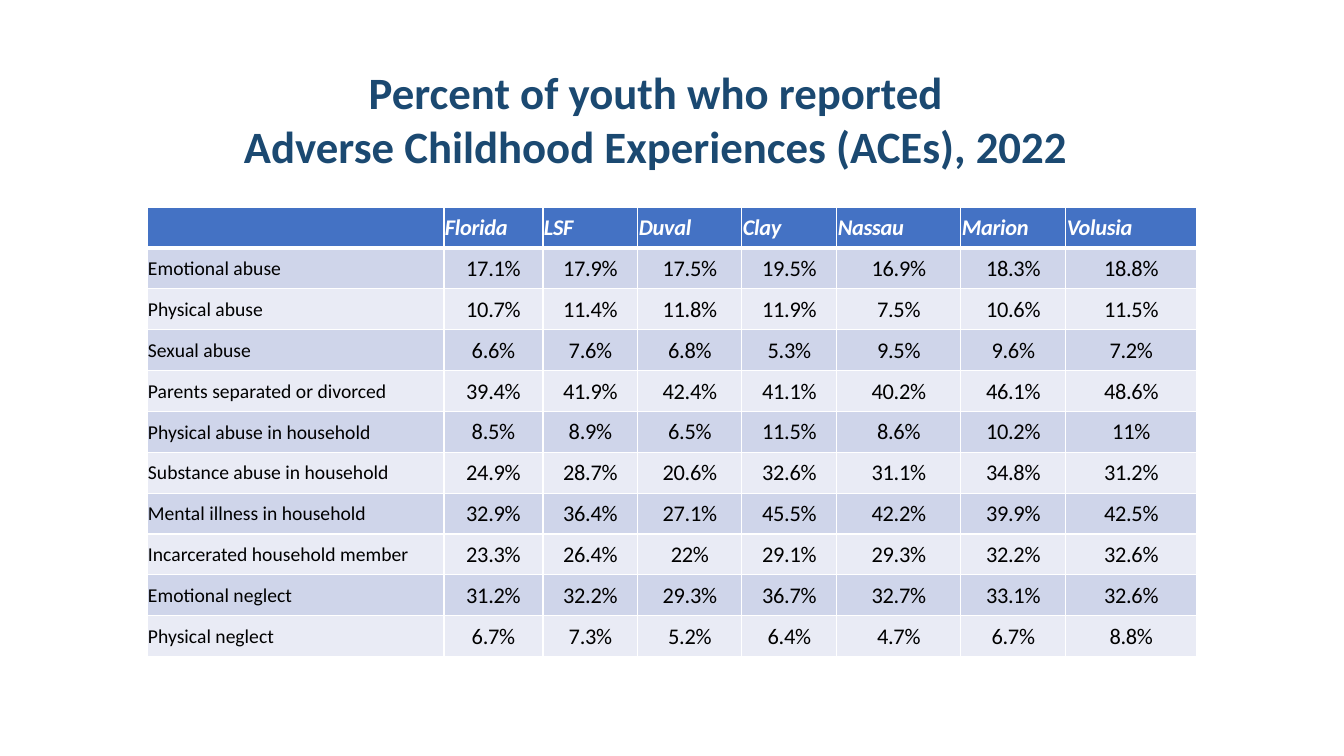
from lxml.etree import SubElement
from pptx import Presentation
from pptx.dml.color import RGBColor
from pptx.enum.text import MSO_ANCHOR, MSO_AUTO_SIZE, PP_ALIGN
from pptx.oxml.ns import qn
from pptx.util import Emu, Pt

EMU_PER_PX = 914400 / 100.8
FONT = "Calibri"
COLORS = {
    "title": "1B4971",
    "header": "4472C4",
    "band_dark": "CFD5EA",
    "band_light": "E9EBF5",
    "white": "FFFFFF",
    "black": "000000",
}

TITLE = "Percent of youth who reported \nAdverse Childhood Experiences (ACEs), 2022 "
AREAS = ["", "Florida", "LSF", "Duval", "Clay", "Nassau", "Marion", "Volusia"]
COLUMN_WIDTHS = [297, 99, 95, 104, 95, 124, 105, 131]
EXPERIENCES = [
    ["Emotional abuse", 17.1, 17.9, 17.5, 19.5, 16.9, 18.3, 18.8],
    ["Physical abuse", 10.7, 11.4, 11.8, 11.9, 7.5, 10.6, 11.5],
    ["Sexual abuse", 6.6, 7.6, 6.8, 5.3, 9.5, 9.6, 7.2],
    ["Parents separated or divorced", 39.4, 41.9, 42.4, 41.1, 40.2, 46.1, 48.6],
    ["Physical abuse in household", 8.5, 8.9, 6.5, 11.5, 8.6, 10.2, 11],
    ["Substance abuse in household", 24.9, 28.7, 20.6, 32.6, 31.1, 34.8, 31.2],
    ["Mental illness in household", 32.9, 36.4, 27.1, 45.5, 42.2, 39.9, 42.5],
    ["Incarcerated household member", 23.3, 26.4, 22, 29.1, 29.3, 32.2, 32.6],
    ["Emotional neglect", 31.2, 32.2, 29.3, 36.7, 32.7, 33.1, 32.6],
    ["Physical neglect", 6.7, 7.3, 5.2, 6.4, 4.7, 6.7, 8.8],
]


def px(length):
    return Emu(round(length * EMU_PER_PX))


def rgb(name):
    return RGBColor.from_string(COLORS[name])


def format_font(font, size, color, bold=False, italic=False):
    font.name = FONT
    font.size = Pt(size)
    font.color.rgb = rgb(color)
    font.bold = bold
    font.italic = italic


def add_title(slide):
    title = slide.shapes.title
    title.left, title.top, title.width, title.height = map(px, (106, 60, 1110, 119))
    frame = title.text_frame
    frame.text = TITLE
    frame.word_wrap = True
    frame.vertical_anchor = MSO_ANCHOR.TOP
    frame.auto_size = MSO_AUTO_SIZE.SHAPE_TO_FIT_TEXT
    for line in frame.paragraphs:
        line.alignment = PP_ALIGN.CENTER
        for run in line.runs:
            format_font(run.font, 32, "title", bold=True)


def set_borders(cell, top=1, bottom=1):
    properties = cell._tc.get_or_add_tcPr()
    for side, width in (("L", 1), ("R", 1), ("T", top), ("B", bottom)):
        border = SubElement(properties, qn(f"a:ln{side}"), w=str(Pt(width)))
        fill = SubElement(border, qn("a:solidFill"))
        SubElement(fill, qn("a:srgbClr"), val=COLORS["white"])


def fill_cell(cell, text, fill, size, color, tight=True, centred=False, heading=False):
    cell.fill.solid()
    cell.fill.fore_color.rgb = rgb(fill)
    cell.vertical_anchor = MSO_ANCHOR.MIDDLE
    cell.margin_left = cell.margin_right = cell.margin_top = px(1)
    cell.margin_bottom = 0
    cell.text_frame.text = text
    paragraph = cell.text_frame.paragraphs[0]
    paragraph.alignment = PP_ALIGN.CENTER if centred else PP_ALIGN.LEFT
    for run in paragraph.runs:
        format_font(run.font, size, color, bold=heading, italic=heading)
        if tight:
            run._r.get_or_add_rPr().set("spc", "-20")


def add_experience_table(slide):
    table = slide.shapes.add_table(
        len(EXPERIENCES) + 1, len(AREAS), px(147), px(207), px(1050), px(450)
    ).table
    table.horz_banding = False
    for column, width in zip(table.columns, COLUMN_WIDTHS):
        column.width = px(width)

    # Header row with a heavier rule below it
    for index, area in enumerate(AREAS):
        cell = table.cell(0, index)
        set_borders(cell, bottom=3)
        fill_cell(cell, area, "header", 16, "white", heading=True)

    # Banded rows: a label, then one percentage per area
    for row, (experience, *percents) in enumerate(EXPERIENCES, start=1):
        band = "band_dark" if row % 2 else "band_light"
        for index in range(len(AREAS)):
            set_borders(table.cell(row, index), top=3 if row == 1 else 1)
        fill_cell(table.cell(row, 0), experience, band, 14, "black", tight=False)
        for index, percent in enumerate(percents, start=1):
            fill_cell(table.cell(row, index), f"{percent}%", band, 16, "black", centred=True)


def main():
    presentation = Presentation()
    presentation.slide_width = px(1344)
    presentation.slide_height = px(756)
    slide = presentation.slides.add_slide(presentation.slide_layouts[5])
    add_experience_table(slide)
    add_title(slide)
    presentation.save("out.pptx")


if __name__ == "__main__":
    main()
